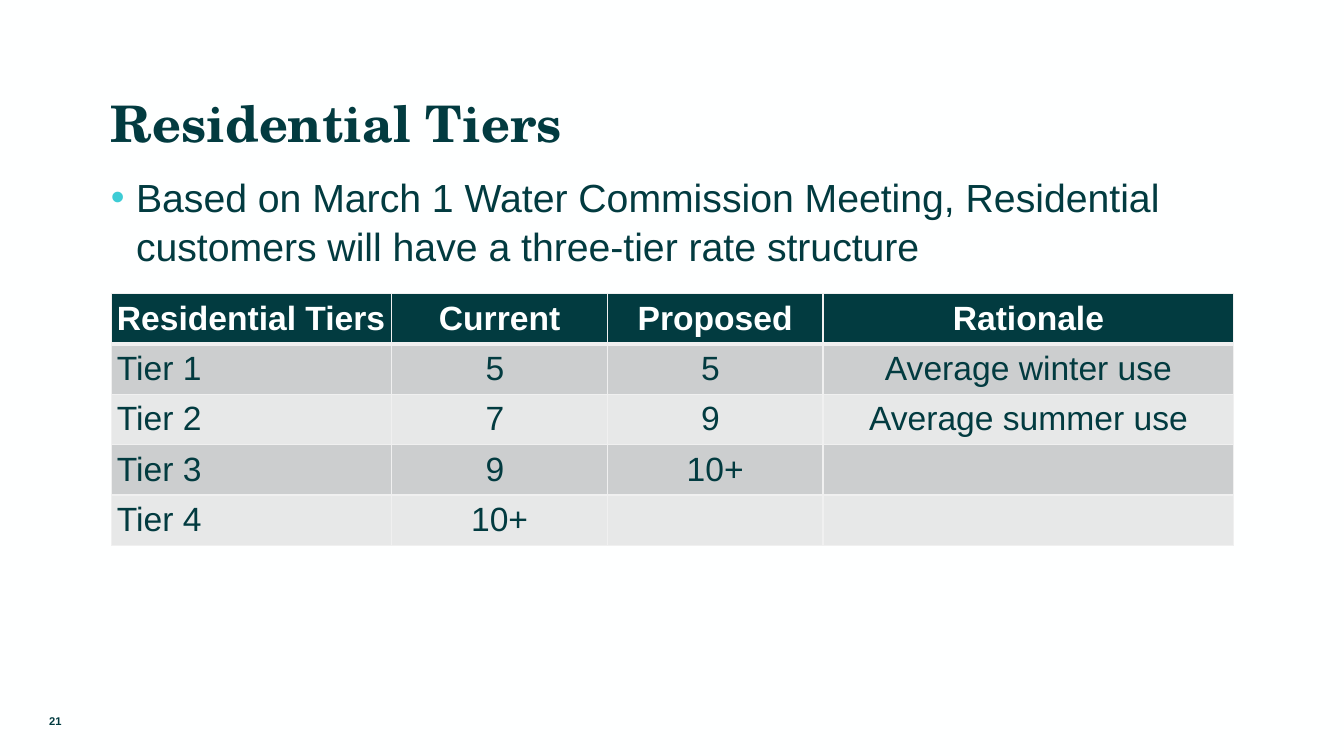
from pptx import Presentation
from pptx.dml.color import RGBColor
from pptx.enum.text import MSO_ANCHOR, MSO_AUTO_SIZE, PP_ALIGN
from pptx.oxml import parse_xml
from pptx.oxml.ns import nsdecls
from pptx.util import Pt

LEFT, CENTER = PP_ALIGN.LEFT, PP_ALIGN.CENTER
TOP, MIDDLE, BOTTOM = MSO_ANCHOR.TOP, MSO_ANCHOR.MIDDLE, MSO_ANCHOR.BOTTOM
NO_FIT = MSO_AUTO_SIZE.NONE
TEAL = RGBColor(0x02, 0x3B, 0x40)
AQUA = RGBColor(0x3D, 0xCC, 0xD5)
WHITE = RGBColor(0xFE, 0xFF, 0xFF)
BORDER = RGBColor(0xF0, 0xF0, 0xF0)
DARK_BAND = RGBColor(0xCC, 0xCE, 0xCF)
LIGHT_BAND = RGBColor(0xE7, 0xE8, 0xE8)
HEADING_FONT, BODY_FONT = "TeX Gyre Schola", "Arial"

COLUMN_WIDTHS = [200, 154, 154, 293.5]
ROW_HEIGHT = 36
TIER_ROWS = [
    ["Residential Tiers", "Current", "Proposed", "Rationale"],
    ["Tier 1", "5 ", "5 ", "Average winter use"],
    ["Tier 2", "7 ", "9 ", "Average summer use"],
    ["Tier 3", "9 ", "10+", ""],
    ["Tier 4", "10+", "", ""],
]


def write_text(frame, text, size=24, font=BODY_FONT, color=TEAL, bold=False, align=LEFT):
    para = frame.paragraphs[0]
    para.alignment = align
    span = para.add_run()
    span.text = text
    span.font.size = Pt(size)
    span.font.name = font
    span.font.color.rgb = color
    span.font.bold = bold
    return para


def set_frame(frame, anchor, insets):
    frame.word_wrap = True
    frame.auto_size = NO_FIT
    frame.vertical_anchor = anchor
    left, top, right, bottom = insets
    frame.margin_left, frame.margin_top = Pt(left), Pt(top)
    frame.margin_right, frame.margin_bottom = Pt(right), Pt(bottom)


def add_bullet(para, color, indent):
    properties = para._p.get_or_add_pPr()
    properties.set("marL", str(Pt(indent)))
    properties.set("indent", str(-Pt(indent)))
    properties.append(parse_xml(
        f'<a:buClr {nsdecls("a")}><a:srgbClr val="{color}"/></a:buClr>'))
    properties.append(parse_xml(f'<a:buFont {nsdecls("a")} typeface="Arial"/>'))
    properties.append(parse_xml(f'<a:buChar {nsdecls("a")} char="•"/>'))


def set_borders(cell, widths):
    properties = cell._tc.get_or_add_tcPr()
    for side, width in zip("LRTB", widths):
        properties.append(parse_xml(
            f'<a:ln{side} {nsdecls("a")} w="{Pt(width)}"><a:solidFill>'
            f'<a:srgbClr val="{BORDER}"/></a:solidFill></a:ln{side}>'))


class TierSlide:
    def __init__(self, deck):
        self.page = deck.slides.add_slide(deck.slide_layouts[5])
        background = self.page.background.fill
        background.solid()
        background.fore_color.rgb = WHITE

    def title(self, text, left, top, width, height):
        box = self.page.shapes.title
        box.left, box.top, box.width, box.height = Pt(left), Pt(top), Pt(width), Pt(height)
        set_frame(box.text_frame, BOTTOM, (0, 15, 0, 0))
        write_text(box.text_frame, text, size=36, font=HEADING_FONT, bold=True)

    def text(self, text, left, top, width, height, anchor=TOP, insets=(0, 0, 0, 0), **style):
        box = self.page.shapes.add_textbox(Pt(left), Pt(top), Pt(width), Pt(height))
        set_frame(box.text_frame, anchor, insets)
        return write_text(box.text_frame, text, **style)

    def bullet(self, text, left, top, width, height):
        para = self.text(text, left, top, width, height, size=28)
        para.line_spacing = 1.04
        para.space_before = Pt(10)
        add_bullet(para, AQUA, 18)

    def table(self, rows, left, top, widths, row_height):
        frame = self.page.shapes.add_table(
            len(rows), len(widths), Pt(left), Pt(top),
            Pt(sum(widths)), Pt(row_height * len(rows)))
        table = frame.table
        for column, width in zip(table.columns, widths):
            column.width = Pt(width)
        for row_index, values in enumerate(rows):
            table.rows[row_index].height = Pt(row_height)
            for column_index, value in enumerate(values):
                self.cell(table.cell(row_index, column_index), value, row_index, column_index)

    def cell(self, cell, value, row_index, column_index):
        header = row_index == 0
        cell.vertical_anchor = MIDDLE
        cell.margin_left = cell.margin_right = Pt(3.6)
        cell.margin_top = cell.margin_bottom = Pt(0)
        set_borders(cell, (1, 1, 3 if row_index == 1 else 1, 3 if header else 1))
        cell.fill.solid()
        band = DARK_BAND if row_index % 2 else LIGHT_BAND
        cell.fill.fore_color.rgb = TEAL if header else band
        if value:
            write_text(cell.text_frame, value, bold=header,
                       color=WHITE if header else TEAL,
                       align=CENTER if column_index else LEFT)


def main():
    deck = Presentation()
    deck.slide_width, deck.slide_height = Pt(960), Pt(540)
    slide = TierSlide(deck)
    slide.title("Residential Tiers", 79.2, 46, 801.5, 62.7)
    slide.bullet("Based on March 1 Water Commission Meeting, Residential customers "
                 "will have a three-tier rate structure", 79.2, 122.4, 801.5, 347)
    slide.text("21", 0, 500.4, 79.2, 28.8, anchor=MIDDLE, insets=(7.2, 3.6, 7.2, 3.6),
               size=8, bold=True, align=CENTER)
    slide.table(TIER_ROWS, 79.9, 209.5, COLUMN_WIDTHS, ROW_HEIGHT)
    deck.save("out.pptx")


if __name__ == "__main__":
    main()
